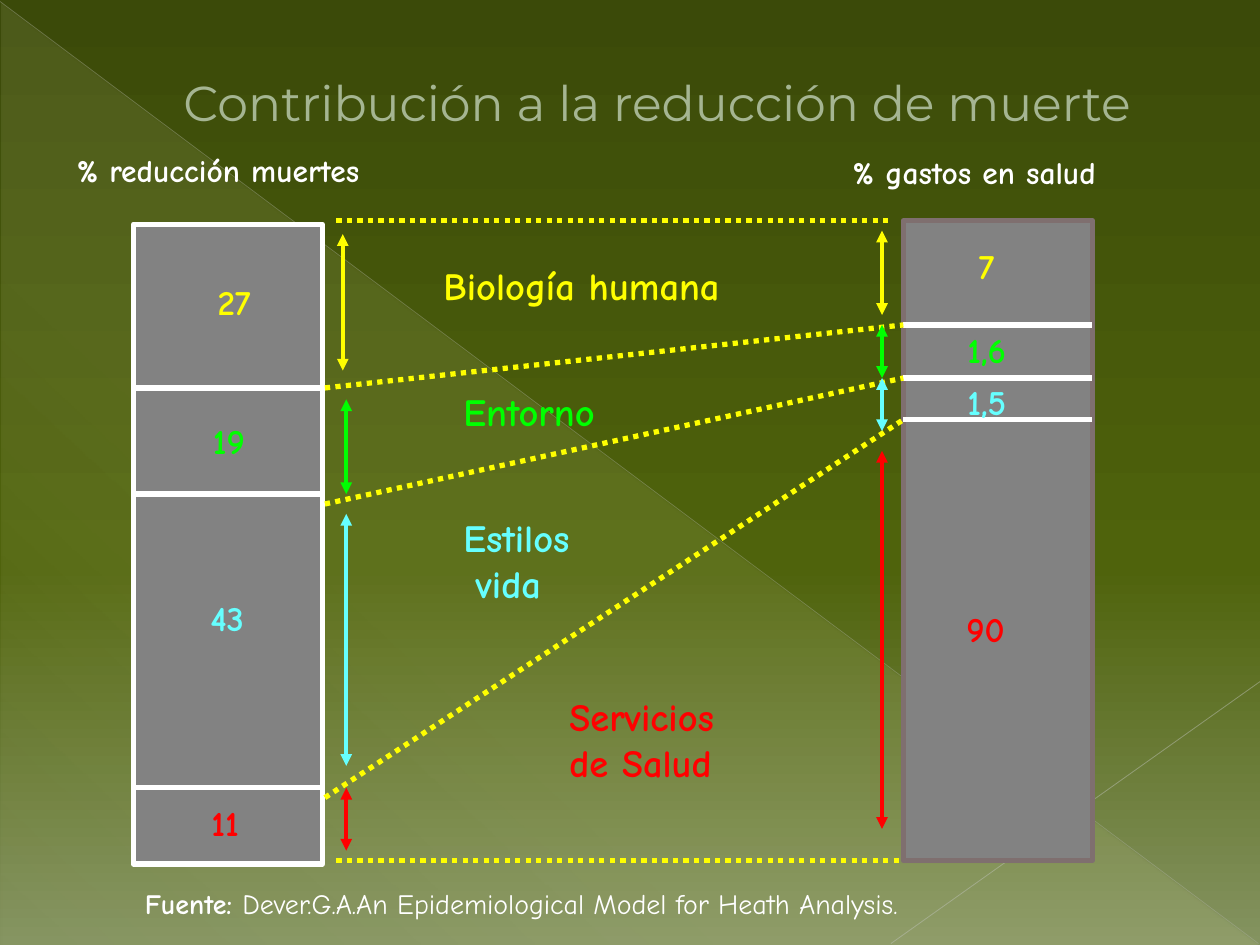
from lxml import etree
from pptx import Presentation
from pptx.dml.color import RGBColor
from pptx.enum.dml import MSO_LINE
from pptx.enum.shapes import MSO_CONNECTOR, MSO_SHAPE
from pptx.enum.text import MSO_ANCHOR, MSO_AUTO_SIZE, PP_ALIGN
from pptx.oxml.ns import qn
from pptx.util import Cm, Pt

STRAIGHT = MSO_CONNECTOR.STRAIGHT
DOTTED = MSO_LINE.ROUND_DOT
TITLE_ONLY = 5

# Content: lengths in centimetres
YELLOW, GREEN, CYAN, RED, WHITE = "FFFF00", "00FF00", "66FFFF", "FF0000", "FFFFFF"
TITLE = "Contribución a la reducción de muerte"
FONT, TITLE_FONT = "Comic Neue", "Montserrat"
SOURCE = [("Fuente: ", True),
          ("Dever.G.A.An Epidemiological Model for Heath Analysis.", False)]
HEADINGS = [("% reducción muertes", 1.3, 2.92, 9.02),
            ("% gastos en salud", 16.94, 2.97, 7.87)]

BAR_WIDTH, BAR_HEIGHT = 3.81, 12.9
BARS = [  # left, top, outline, divider left, divider heights
    (2.69, 4.52, WHITE, 2.74, [7.82, 9.96, 15.88]),
    (18.21, 4.45, "7F6F6F", 18.21, [6.55, 7.62, 8.46]),
]
DOTTED_LINES = [  # x1, y1, x2, y2
    (6.78, 4.45, 17.98, 4.45),
    (6.55, 7.82, 18.21, 6.55),
    (6.55, 10.16, 18.21, 7.62),
    (6.55, 16.08, 18.21, 8.46),
    (6.78, 17.35, 18.21, 17.35),
]
FACTORS = [
    # colour, (label lines, left, top, width), values (text, left, top),
    # arrows (x, top, bottom)
    (YELLOW, (["Biología humana"], 8.69, 5.16, 6.6),
     [("27", 4.14, 5.54), ("7", 19.48, 4.8)],
     [(6.91, 4.72, 7.47), (17.78, 4.65, 6.35)]),
    (GREEN, (["Entorno"], 9.09, 7.7, 3.6),
     [("19", 4.04, 8.33), ("1,6", 19.25, 6.5)],
     [(6.98, 8.05, 9.96), (17.78, 6.55, 7.62)]),
    (CYAN, (["Estilos", "vida"], 9.09, 10.24, 3.2),
     [("43", 3.99, 11.91), ("1,5", 19.25, 7.54)],
     [(6.98, 10.36, 15.44), (17.78, 7.62, 8.69)]),
    (RED, (["Servicios", "de Salud"], 11.23, 13.84, 4.2),
     [("11", 4.01, 16.03), ("90", 19.23, 12.12)],
     [(6.98, 15.88, 17.15), (17.78, 9.09, 16.71)]),
]
SECOND_LINE_INDENT = {"vida": 0.25}


def rgb(value):
    return RGBColor.from_string(value)


def add_alpha(color_element, percent):
    etree.SubElement(color_element, qn("a:alpha"), val=str(percent * 1000))


def set_gradient(fill, owner, stops, angle):
    fill.gradient()
    gradient = owner.find(".//" + qn("a:gradFill"))
    gradient.clear()
    stop_list = etree.SubElement(gradient, qn("a:gsLst"))
    for position, color, opacity in stops:
        stop = etree.SubElement(stop_list, qn("a:gs"), pos=str(position * 1000))
        color_element = etree.SubElement(stop, qn("a:srgbClr"), val=color)
        if opacity < 100:
            add_alpha(color_element, opacity)
    etree.SubElement(gradient, qn("a:lin"), ang=str(angle * 60000), scaled="0")


def add_line(x1, y1, x2, y2, color, width=3, dash=None, arrows=False, opacity=100):
    connector = slide.shapes.add_connector(STRAIGHT, Cm(x1), Cm(y1), Cm(x2), Cm(y2))
    line = connector.line
    line.color.rgb = rgb(color)
    line.width = Pt(width)
    if dash:
        line.dash_style = dash
    properties = connector._element.spPr
    line_element = properties.find(qn("a:ln"))
    if opacity < 100:
        add_alpha(line_element.find(".//" + qn("a:srgbClr")), opacity)
    if arrows:
        for end in ("a:headEnd", "a:tailEnd"):
            etree.SubElement(line_element, qn(end), type="triangle")
    etree.SubElement(properties, qn("a:effectLst"))


def format_font(font, size, color, bold=True, name=FONT):
    font.name, font.size, font.bold = name, Pt(size), bold
    font.color.rgb = rgb(color)


def add_text(lines, left, top, width, height, size, color):
    box = slide.shapes.add_textbox(Cm(left), Cm(top), Cm(width), Cm(height))
    frame = box.text_frame
    frame.word_wrap = True
    frame.text = "\n".join(lines)
    for paragraph in frame.paragraphs:
        indent = SECOND_LINE_INDENT.get(paragraph.text)
        if indent:
            paragraph._p.get_or_add_pPr().set("marL", str(Cm(indent)))
        for run in paragraph.runs:
            format_font(run.font, size, color)
    return frame


presentation = Presentation()
presentation.slide_width, presentation.slide_height = Cm(25.4), Cm(19.05)
slide = presentation.slides.add_slide(presentation.slide_layouts[TITLE_ONLY])

# Background and its decoration
set_gradient(slide.background.fill, slide._element,
             [(0, "3B4A09", 100), (60, "4F630C", 100), (100, "849360", 100)], 90)
triangle = slide.shapes.add_shape(MSO_SHAPE.RIGHT_TRIANGLE,
                                  Cm(0.03), Cm(0.05), Cm(25.35), Cm(19))
triangle.shadow.inherit = False
triangle.line.fill.background()
set_gradient(triangle.fill, triangle._element,
             [(0, "FEFAC9", 10), (70, "FEFAC9", 8), (100, "FEFAC9", 1)], 133)
add_line(0, 0.03, 25.37, 19.02, "BABDB3", 0.39, opacity=35)
add_line(25.4, 13.74, 17.96, 19.02, "C1C4BC", 0.47, opacity=45)

# Title
title = slide.shapes.title
title.left, title.top, title.width, title.height = Cm(1.09), Cm(1.32), Cm(24.31), Cm(1.45)
title_frame = title.text_frame
title_frame.text = TITLE
title_frame.auto_size = MSO_AUTO_SIZE.NONE
title_frame.vertical_anchor = MSO_ANCHOR.MIDDLE
title_frame.paragraphs[0].alignment = PP_ALIGN.CENTER
format_font(title_frame.paragraphs[0].runs[0].font, 28, "A5B592", False, TITLE_FONT)

# Bars with their dividers
for left, top, outline, divider_left, dividers in BARS:
    bar = slide.shapes.add_shape(MSO_SHAPE.RECTANGLE, Cm(left), Cm(top),
                                 Cm(BAR_WIDTH), Cm(BAR_HEIGHT))
    bar.shadow.inherit = False
    bar.fill.solid()
    bar.fill.fore_color.rgb = rgb("828282")
    bar.line.color.rgb = rgb(outline)
    bar.line.width = Pt(3)
    for y in dividers:
        add_line(divider_left, y, divider_left + BAR_WIDTH, y, WHITE)

# Dotted lines between the bars
for ends in DOTTED_LINES:
    add_line(*ends, YELLOW, dash=DOTTED)

# Factors: label, values and arrows share a colour
for color, (lines, left, top, width), values, arrows in FACTORS:
    add_text(lines, left, top, width, 1.19 if len(lines) == 1 else 2.11, 22, color)
    for value, value_left, value_top in values:
        add_text([value], value_left, value_top, 1.68, 1.09, 20, color)
    for x, start, end in arrows:
        add_line(x, start, x, end, color, 2.25, arrows=True)

# Headings and source
for heading, left, top, width in HEADINGS:
    add_text([heading], left, top, width, 1.27, 18, WHITE)
source_frame = add_text([], 2.67, 17.75, 21.8, 1.02, 16, WHITE)
for text, bold in SOURCE:
    run = source_frame.paragraphs[0].add_run()
    run.text = text
    format_font(run.font, 16, WHITE, bold)

presentation.save("out.pptx")
